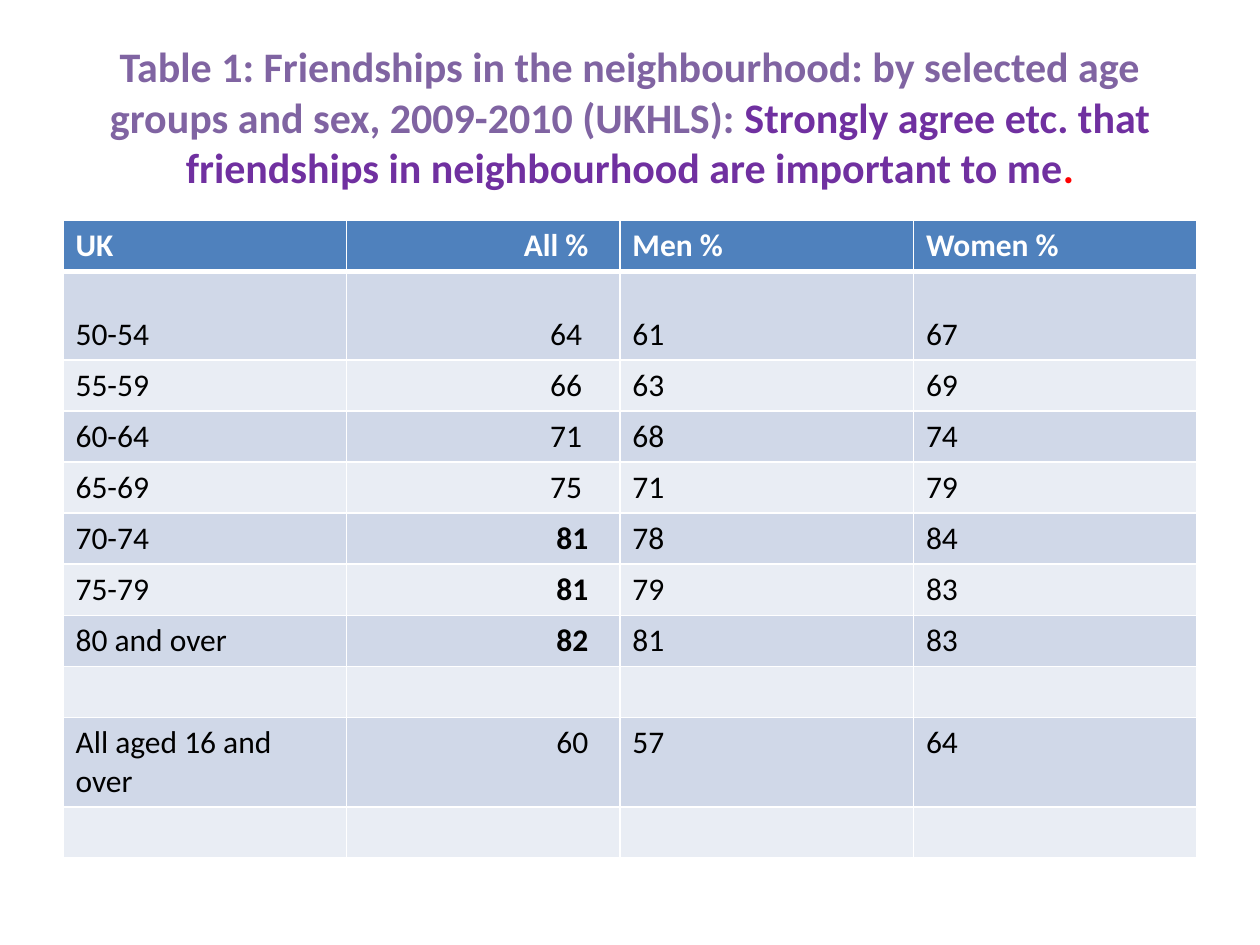
import lxml.etree
import pptx
import pptx.dml.color
import pptx.enum.text
import pptx.oxml.ns
import pptx.util

Inches = pptx.util.Inches
Pt = pptx.util.Pt
RGBColor = pptx.dml.color.RGBColor
Align = pptx.enum.text.PP_ALIGN
Anchor = pptx.enum.text.MSO_ANCHOR
qn = pptx.oxml.ns.qn

WHITE = RGBColor(0xFF, 0xFF, 0xFF)
BLACK = RGBColor(0x00, 0x00, 0x00)
BLUE = RGBColor(0x4F, 0x81, 0xBD)
BAND_DARK = RGBColor(0xD0, 0xD8, 0xE8)
BAND_LIGHT = RGBColor(0xE9, 0xED, 0xF4)
MAUVE = RGBColor(0x80, 0x64, 0xA2)
PURPLE = RGBColor(0x70, 0x30, 0xA0)
RED = RGBColor(0xFF, 0x00, 0x00)

TITLE = [
    ("Table 1: Friendships in the neighbourhood: by selected age groups "
     "and sex, 2009-2010 (UKHLS): ", MAUVE),
    ("Strongly agree etc. that friendships in neighbourhood "
     "are important to me", PURPLE),
    (".", RED),
]
ROWS = [
    ("UK", "All %", "Men %", "Women %"),
    ("50-54", "64", "61", "67"),
    ("55-59", "66", "63", "69"),
    ("60-64", "71", "68", "74"),
    ("65-69", "75", "71", "79"),
    ("70-74", "81", "78", "84"),
    ("75-79", "81", "79", "83"),
    ("80 and over", "82", "81", "83"),
    ("", "", "", ""),
    ("All aged 16 and over", "60", "57", "64"),
    ("", "", "", ""),
]
COLUMN_WIDTHS = [2.25, 2.17, 2.33, 2.25]
TABLE_HEIGHT = 5.05
TALL_ROWS = {1, 9}
TALL_HEIGHT = 0.7
ROW_HEIGHT = (TABLE_HEIGHT - len(TALL_ROWS) * TALL_HEIGHT) / (len(ROWS) - len(TALL_ROWS))
ALL_COLUMN = 1
BOLD_ALL_ROWS = {5, 6, 7}
INSET_ALL_ROWS = {1, 2, 3, 4}


class SlideBuilder:
    def __init__(self, page, font_name="Calibri"):
        self.page = page
        self.font_name = font_name

    def add_span(self, para, text, color, **formats):
        span = para.add_run()
        span.text = text
        span.font.color.rgb = color
        for name, value in {"name": self.font_name, **formats}.items():
            setattr(span.font, name, value)

    def add_title(self, spans, left, top, width, height):
        box = self.page.shapes.title
        place = {"left": left, "top": top, "width": width, "height": height}
        for name, value in place.items():
            setattr(box, name, Inches(value))
        frame = box.text_frame
        frame.auto_size = pptx.enum.text.MSO_AUTO_SIZE.NONE
        frame.vertical_anchor = Anchor.MIDDLE
        para = frame.paragraphs[0]
        para.alignment = Align.CENTER
        for text, color in spans:
            self.add_span(para, text, color, size=Pt(24), bold=True)

    def add_table(self, left, top):
        table = self.page.shapes.add_table(
            len(ROWS), len(COLUMN_WIDTHS), Inches(left), Inches(top),
            Inches(sum(COLUMN_WIDTHS)), Inches(TABLE_HEIGHT)).table
        for column, width in zip(table.columns, COLUMN_WIDTHS):
            column.width = Inches(width)
        for row_index, texts in enumerate(ROWS):
            height = TALL_HEIGHT if row_index in TALL_ROWS else ROW_HEIGHT
            table.rows[row_index].height = Inches(height)
            for column_index, text in enumerate(texts):
                cell = table.cell(row_index, column_index)
                self.fill_cell(cell, text, row_index, column_index)

    def fill_cell(self, cell, text, row_index, column_index):
        header = row_index == 0
        cell.fill.solid()
        band = BAND_DARK if row_index % 2 else BAND_LIGHT
        cell.fill.fore_color.rgb = BLUE if header else band
        cell.vertical_anchor = Anchor.BOTTOM if row_index == 1 else Anchor.TOP
        para = cell.text_frame.paragraphs[0]
        para.alignment = Align.LEFT
        bold = header
        if column_index == ALL_COLUMN:
            para.alignment = Align.RIGHT
            inset = 0.3 if row_index in INSET_ALL_ROWS else 0.25
            cell.margin_right = Inches(inset)
            bold = header or row_index in BOLD_ALL_ROWS
        if text:
            self.add_span(para, text, WHITE if header else BLACK,
                          size=Pt(18), bold=bold)
        self.add_borders(cell, {"L": 1, "R": 1, "T": 3 if row_index == 1 else 1,
                                "B": 3 if header else 1})

    def add_borders(self, cell, widths):
        """Draw white cell edges; line elements must come before the fill."""
        properties = cell._tc.get_or_add_tcPr()
        for index, (side, width) in enumerate(widths.items()):
            line = lxml.etree.Element(qn(f"a:ln{side}"), w=str(Pt(width)))
            fill = lxml.etree.SubElement(line, qn("a:solidFill"))
            lxml.etree.SubElement(fill, qn("a:srgbClr"), val=str(WHITE))
            properties.insert(index, line)


def main():
    deck = pptx.Presentation()
    deck.slide_width = Inches(10)
    deck.slide_height = Inches(7.5)
    title_only = deck.slide_layouts[5]
    builder = SlideBuilder(deck.slides.add_slide(title_only))
    builder.add_title(TITLE, 0.5, 0.3, 9, 1.25)
    builder.add_table(0.5, 1.75)
    deck.save("out.pptx")


if __name__ == "__main__":
    main()
